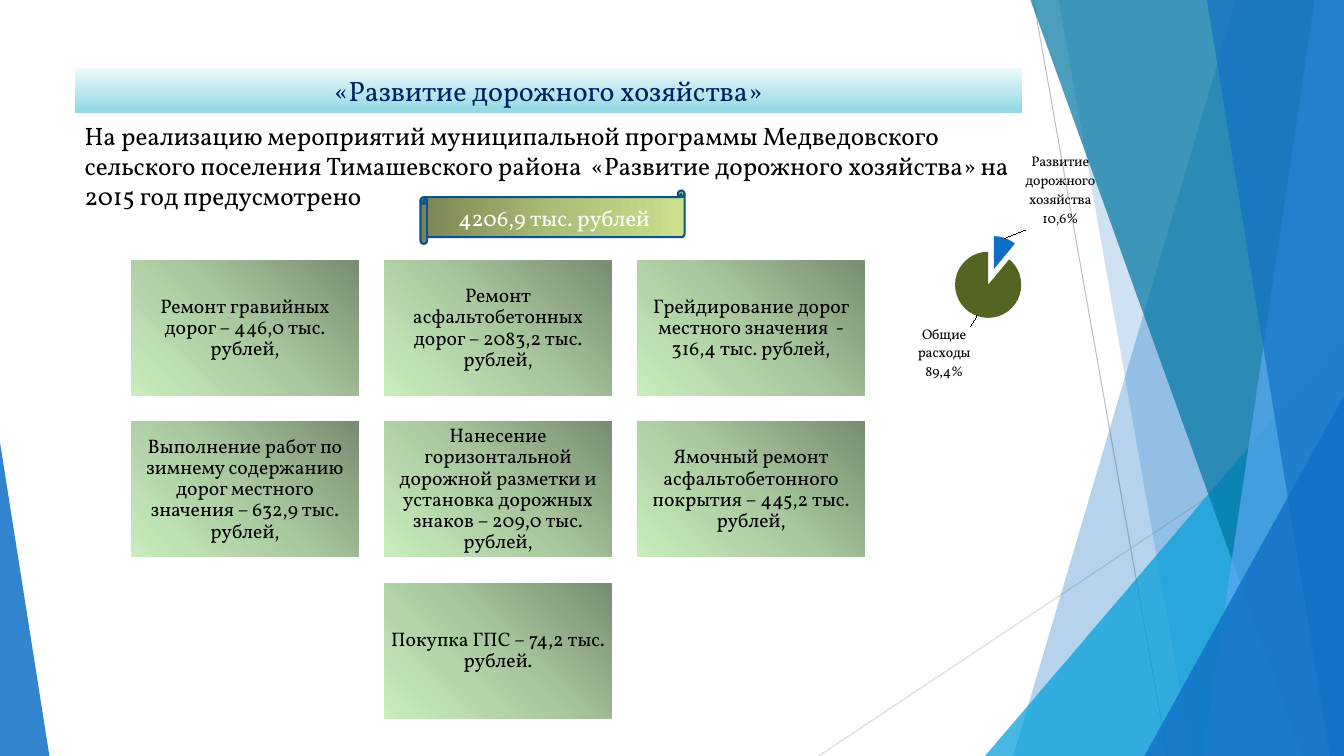
from lxml import etree
from pptx import Presentation
from pptx.chart.data import CategoryChartData
from pptx.dml.color import RGBColor
from pptx.enum.chart import XL_CHART_TYPE, XL_LABEL_POSITION
from pptx.enum.shapes import MSO_CONNECTOR, MSO_SHAPE
from pptx.enum.text import MSO_ANCHOR, MSO_AUTO_SIZE, PP_ALIGN
from pptx.oxml.ns import qn
from pptx.util import Inches, Pt

RECT, SCROLL = MSO_SHAPE.RECTANGLE, MSO_SHAPE.HORIZONTAL_SCROLL
STRAIGHT, PIE = MSO_CONNECTOR.STRAIGHT, XL_CHART_TYPE.PIE
MIDDLE, TOP = MSO_ANCHOR.MIDDLE, MSO_ANCHOR.TOP
CENTER, LEFT = PP_ALIGN.CENTER, PP_ALIGN.LEFT
OUTSIDE, NO_FIT = XL_LABEL_POSITION.OUTSIDE_END, MSO_AUTO_SIZE.NONE

FONT = "Vollkorn"
COLORS = {
    "black": "000000", "white": "FFFFFF", "navy": "002060",
    "blue": "0F6FC6", "cyan": "009DD9", "teal": "0076A3", "sky": "59AAF2",
    "edge": "0B5292", "olive": "546422", "pale": "D9D9D9", "gray": "BFBFBF",
}
BAND = [(0, "EFFBFC"), (94, "95D9E4")]
GOLD = [(0, "798553"), (50, "ACBD76"), (100, "CCE08C")]
GREEN = [(0, "778C70"), (50, "A9C89F"), (100, "C9EDBD")]

RAYS = [((8.12, 7.5), (13.33, 4.03), "pale"), ((10.25, 0), (11.58, 7.5), "gray")]
FACETS = [
    ("blue", 30, [(12.26, 0), (10.05, 7.5), (13.33, 7.5), (13.33, 0)]),
    ("blue", 20, [(10.5, 0), (11.82, 7.5), (13.33, 7.5), (13.33, 0)]),
    ("cyan", 72, [(9.77, 7.5), (13.33, 3.33), (13.33, 7.5)]),
    ("teal", 70, [(10.22, 0), (12.92, 7.5), (13.33, 7.5), (13.33, 0)]),
    ("sky", 70, [(13.04, 0), (11.93, 7.5), (13.33, 7.5), (13.33, 0)]),
    ("blue", 65, [(11.97, 0), (13.19, 7.5), (13.33, 7.5), (13.33, 0)]),
    ("blue", 80, [(11.35, 7.5), (13.33, 3.93), (13.33, 7.5)]),
    ("blue", 85, [(0, 4.39), (0.49, 7.5), (0, 7.5)]),
]
INTRO = ("На реализацию мероприятий муниципальной программы Медведовского "
         "сельского поселения Тимашевского района  «Развитие дорожного "
         "хозяйства» на 2015 год предусмотрено")
WORKS = [
    "Ремонт гравийных дорог – 446,0 тыс. рублей,",
    "Ремонт асфальтобетонных дорог – 2083,2 тыс. рублей,",
    "Грейдирование дорог местного значения  - 316,4 тыс. рублей,",
    "Выполнение работ по зимнему содержанию дорог местного значения "
    "– 632,9 тыс. рублей,",
    "Нанесение горизонтальной дорожной разметки и установка дорожных "
    "знаков – 209,0 тыс. рублей,",
    "Ямочный ремонт асфальтобетонного покрытия – 445,2 тыс. рублей,",
    "Покупка ГПС – 74,2 тыс. рублей.",
]
# name, value, label lines, colour, label shift
SHARES = [
    ("1", 11, ["Развитие дорожного хозяйства", "10,6%"], "blue", (0.04, -0.01)),
    ("2", 89, ["Общие расходы", "89,4%"], "olive", (-0.01, 0.02)),
]


def color(name):
    return RGBColor.from_string(COLORS[name])


def assign(item, values):
    for key, value in values.items():
        setattr(item, key, value)


def sub(parent, tag, **attrs):
    return etree.SubElement(parent, qn(tag), {k: str(v) for k, v in attrs.items()})


def place(parent, values):
    """Fill a chart layout element with manual values."""
    manual = sub(parent, "c:manualLayout")
    for tag, value in values.items():
        sub(manual, "c:" + tag, val=value)


class Painter:
    def __init__(self, slide, font):
        self.slide, self.font = slide, font
        self.shapes = slide.shapes

    def style(self, font, size, hue):
        assign(font, {"name": self.font, "size": Pt(size), "bold": False})
        font.color.rgb = color(hue)

    def letter(self, shape, text, size, hue, align=CENTER, anchor=MIDDLE,
               inset=(0.1, 0.05), **para):
        frame = shape.text_frame
        wide, high = map(Inches, inset)
        assign(frame, {
            "word_wrap": True, "auto_size": NO_FIT, "vertical_anchor": anchor,
            "margin_left": wide, "margin_right": wide,
            "margin_top": high, "margin_bottom": high, "text": text})
        line = frame.paragraphs[0]
        assign(line, {"alignment": align, **para})
        self.style(line.runs[0].font, size, hue)

    def blend(self, shape, stops, angle=None):
        """Shade along an angle, or out from the top right corner."""
        shape.fill.gradient()
        grad = shape.element.spPr.find(qn("a:gradFill"))
        for child in list(grad):
            grad.remove(child)
        ramp = sub(grad, "a:gsLst")
        for pos, tint in stops:
            sub(sub(ramp, "a:gs", pos=pos * 1000), "a:srgbClr", val=tint)
        if angle is None:
            way = sub(grad, "a:path", path="circle")
            sub(way, "a:fillToRect", l=100000, b=100000)
        else:
            sub(grad, "a:lin", ang=angle * 60000, scaled=0)

    def ray(self, start, end, hue):
        line = self.shapes.add_connector(STRAIGHT, *map(Inches, start + end))
        line.line.color.rgb = color(hue)
        line.line.width = Pt(0.75)
        sub(line.element.spPr, "a:effectLst")

    def facet(self, hue, alpha, points):
        spots = [(Inches(x), Inches(y)) for x, y in points]
        pen = self.shapes.build_freeform(*spots[0])
        pen.add_line_segments(spots[1:], close=True)
        shape = pen.convert_to_shape()
        shape.shadow.inherit = False
        shape.fill.solid()
        shape.fill.fore_color.rgb = color(hue)
        tint = shape.element.spPr.find(qn("a:solidFill"))[0]
        sub(tint, "a:alpha", val=alpha * 1000)
        shape.line.fill.background()

    def title(self, box, text):
        shape = self.shapes.title
        assign(shape, dict(zip(("left", "top", "width", "height"), map(Inches, box))))
        self.blend(shape, BAND, 90)
        self.letter(shape, text, 20, "navy")

    def text(self, box, text, size):
        shape = self.shapes.add_textbox(*map(Inches, box))
        self.letter(shape, text, size, "black", LEFT, TOP, space_before=Pt(10))

    def block(self, kind, box, stops, edge, angle=None):
        shape = self.shapes.add_shape(kind, *map(Inches, box))
        shape.shadow.inherit = False
        self.blend(shape, stops, angle)
        shape.line.color.rgb = color(edge)
        shape.line.width = Pt(1.5)
        return shape

    def pie(self, box, shares):
        data = CategoryChartData()
        data.categories = [share[0] for share in shares]
        data.add_series("Series 1", [share[1] for share in shares])
        chart = self.shapes.add_chart(PIE, *map(Inches, box), data).chart
        assign(chart, {"has_legend": False, "has_title": False})
        self.style(chart.font, 10, "black")
        plot = chart.plots[0]
        plot.vary_by_categories = False
        area = plot._element.getparent()
        layout = area.find(qn("c:layout"))
        if layout is None:
            layout = etree.Element(qn("c:layout"))
            area.insert(0, layout)
        place(layout, {"layoutTarget": "inner", "xMode": "edge", "yMode": "edge",
                       "x": 0.39, "y": 0.37, "w": 0.18, "h": 0.34})
        series = plot.series[0]
        root = series._element
        for i, (_, _, lines, hue, shift) in enumerate(shares):
            point = series.points[i]
            point.format.fill.solid()
            point.format.fill.fore_color.rgb = color(hue)
            label = point.data_label
            label.text_frame.text = "\n".join(lines)
            for line in label.text_frame.paragraphs:
                self.style(line.runs[0].font, 10, "black")
            label.position = OUTSIDE
            spot = etree.Element(qn("c:layout"))
            place(spot, dict(zip("xy", shift)))
            root.findall(".//" + qn("c:dLbl"))[i].insert(1, spot)
        burst = etree.Element(qn("c:explosion"), val="25")
        root.find(qn("c:dPt")).addprevious(burst)


def main():
    deck = Presentation()
    assign(deck, {"slide_width": Inches(13.33), "slide_height": Inches(7.5)})
    art = Painter(deck.slides.add_slide(deck.slide_layouts[5]), FONT)
    for ray in RAYS:
        art.ray(*ray)
    for facet in FACETS:
        art.facet(*facet)
    art.title((0.74, 0.67, 9.4, 0.45), "«Развитие дорожного хозяйства»")
    art.text((0.74, 1.14, 9.4, 1.21), INTRO, 18)
    art.pie((7.64, 1.41, 4.56, 2.48), SHARES)
    total = art.block(SCROLL, (4.17, 1.89, 2.62, 0.53), GOLD, "edge", 0)
    art.letter(total, "4206,9 тыс. рублей", 16, "white")
    for i, work in enumerate(WORKS):
        row, col = divmod(i, 3)
        if row == 2:
            col = 1
        box = (1.29 + 2.51 * col, 2.57 + 1.6 * row, 2.28, 1.37)
        cell = art.block(RECT, box, GREEN, "white")
        art.letter(cell, work, 14, "black", inset=(0.06, 0.06), line_spacing=0.9)
    deck.save("out.pptx")


if __name__ == "__main__":
    main()
